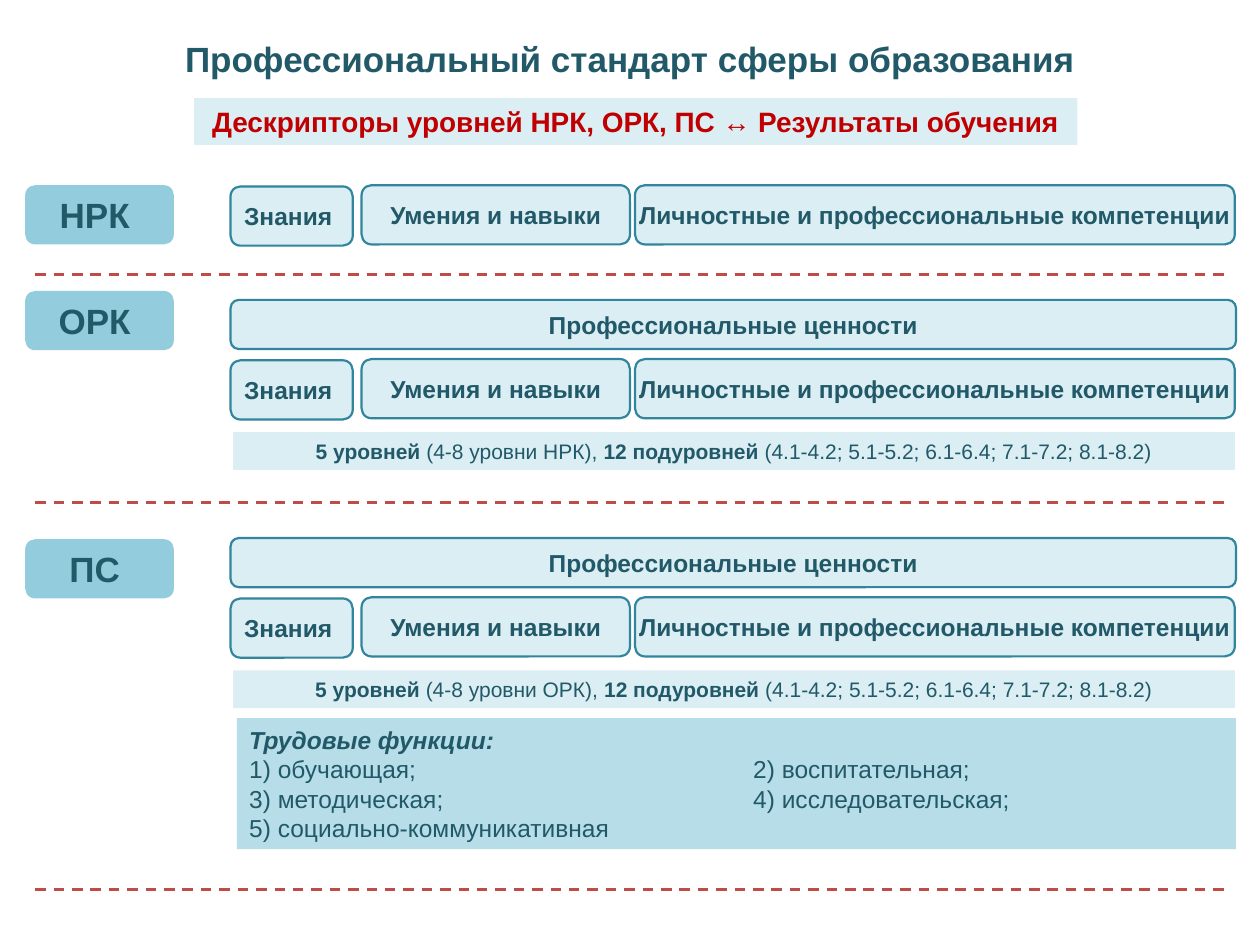
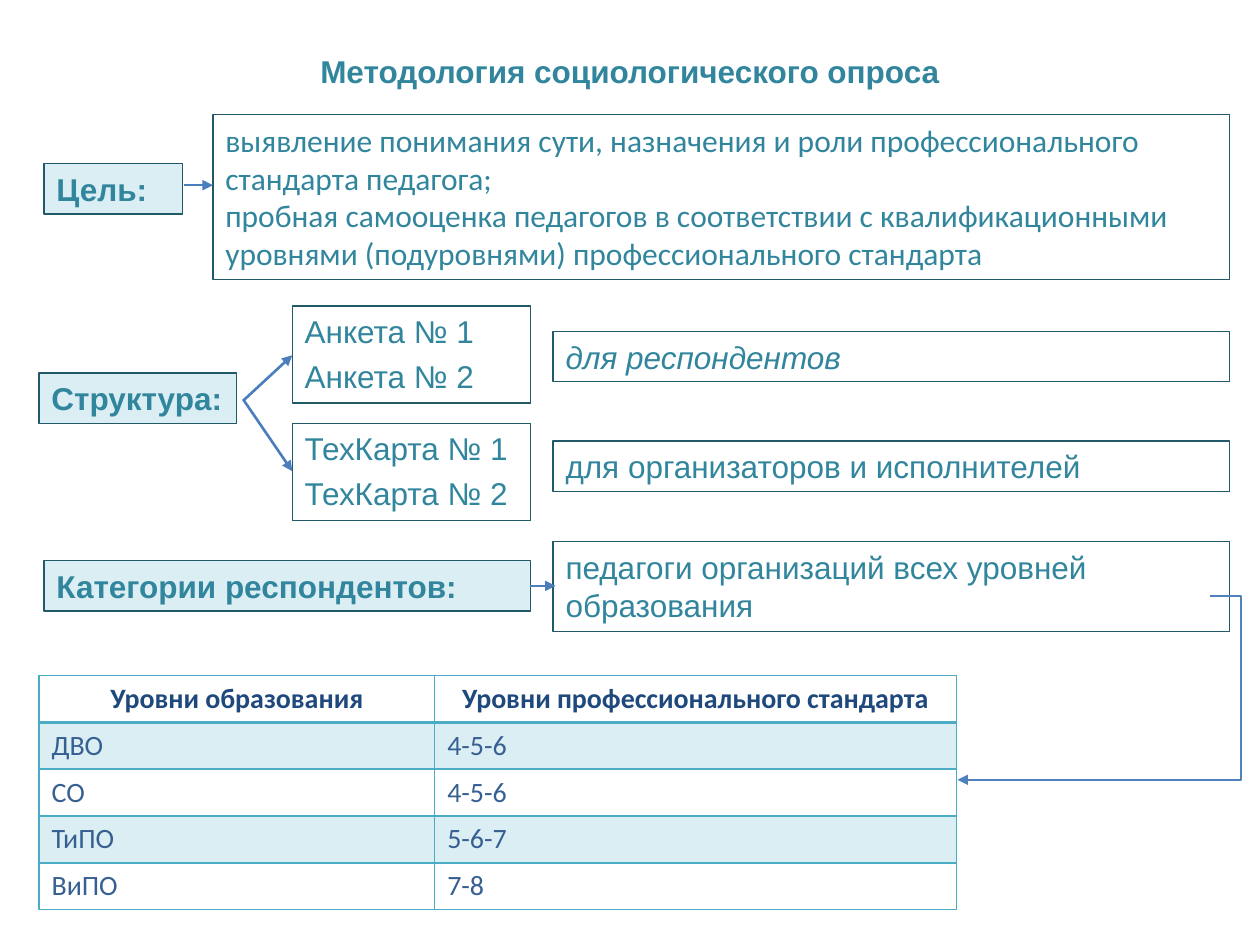
"""Build two slides on the professional standard in education and its survey."""

from dataclasses import dataclass, field
from typing import Any

from lxml import etree
from pptx import Presentation
from pptx.dml.color import RGBColor
from pptx.enum.dml import MSO_LINE
from pptx.enum.shapes import MSO_CONNECTOR, MSO_SHAPE
from pptx.enum.text import MSO_ANCHOR, PP_ALIGN
from pptx.oxml.ns import qn
from pptx.util import Inches, Pt

RECTANGLE, ROUNDED = MSO_SHAPE.RECTANGLE, MSO_SHAPE.ROUNDED_RECTANGLE
STRAIGHT, ELBOW = MSO_CONNECTOR.STRAIGHT, MSO_CONNECTOR.ELBOW
LEFT, CENTER = PP_ALIGN.LEFT, PP_ALIGN.CENTER
TOP, MIDDLE = MSO_ANCHOR.TOP, MSO_ANCHOR.MIDDLE
DASH = MSO_LINE.DASH

DARK_TEAL, TEAL = "215968", "31859C"
PALE, SOFT, MEDIUM = "DBEEF4", "B7DEE8", "93CDDD"
RED, DIVIDER_RED = "C00000", "BF4C48"
ARROW_BLUE, ELBOW_BLUE = "4B7EBC", "4F81BD"
GRID, HEADER_BLUE, CELL_BLUE = "4BACC6", "1F497D", "376092"


@dataclass(frozen=True)
class Format:
    """Font settings of a run."""

    size: float
    color: str
    name: str = "Arial"
    bold: bool = False
    italic: bool = False


@dataclass(frozen=True)
class Span:
    """Text with one format."""

    text: str
    format: Format


@dataclass(frozen=True)
class Box:
    """A box holding paragraphs made of spans; lengths are in inches."""

    left: float
    top: float
    width: float
    height: float
    paras: list[list[Span]] = field(default_factory=list)
    fill: str | None = None
    line: str | None = None
    line_width: float = 0.75
    shape: Any = RECTANGLE
    align: Any = LEFT
    anchor: Any = TOP
    wrap: bool = True
    gap: float = 0
    tab: float | None = None


@dataclass(frozen=True)
class Line:
    """A straight or elbow connector; lengths are in inches."""

    start: tuple[float, float]
    end: tuple[float, float]
    color: str = ARROW_BLUE
    arrow: bool = True
    dash: Any = None
    bend: int | None = None


@dataclass(frozen=True)
class Level:
    """One framework level with its tag and competence row."""

    name: str
    tag_top: float
    row_top: float
    parent: str | None = None


HEADING = Format(20, DARK_TEAL, bold=True)
STRONG = Format(14, DARK_TEAL, bold=True)
LEAD = Format(14, DARK_TEAL, bold=True, italic=True)
PLAIN = Format(14, DARK_TEAL)
COUNT_BOLD = Format(12, DARK_TEAL, bold=True)
COUNT = Format(12, DARK_TEAL)
SURVEY = Format(18, TEAL)
SURVEY_BOLD = Format(18, TEAL, bold=True)
SURVEY_ITALIC = Format(18, TEAL, italic=True)
SURVEY_GOAL = Format(18, TEAL, "Calibri")
TABLE_HEAD = Format(16, HEADER_BLUE, "Calibri", bold=True)
TABLE_CELL = Format(16, CELL_BLUE, "Calibri")

LEVELS = [
    Level("НРК", 1.47, 1.47),
    Level("ОРК", 2.31, 2.85, "НРК"),
    Level("ПС", 4.28, 4.74, "ОРК"),
]
COMPETENCES = [
    ("Знания ", 1.83, 0.97, 0.01),
    ("Умения и навыки", 2.87, 2.13, 0),
    ("Личностные и профессиональные компетенции", 5.04, 4.76, 0),
]
FUNCTIONS = [
    "1) обучающая;\t2) воспитательная;",
    "3) методическая;\t4) исследовательская;",
    "5) социально-коммуникативная",
]
EDUCATION_LEVELS = [
    ("Уровни образования", "Уровни профессионального стандарта"),
    ("ДВО", "4-5-6"),
    ("СО", "4-5-6"),
    ("ТиПО", "5-6-7"),
    ("ВиПО", "7-8"),
]


def rgb(value: str) -> RGBColor:
    """Turn a hex string into a colour."""
    return RGBColor.from_string(value)


def add_span(para: Any, span: Span) -> None:
    """Add a formatted run to a paragraph."""
    run = para.add_run()
    run.text = span.text
    style = span.format
    values = {
        "name": style.name,
        "size": Pt(style.size),
        "bold": style.bold,
        "italic": style.italic,
    }
    for name, value in values.items():
        setattr(run.font, name, value)
    run.font.color.rgb = rgb(style.color)


def add_box(page: Any, box: Box) -> None:
    """Draw a box with its text."""
    area = [Inches(value) for value in (box.left, box.top, box.width, box.height)]
    shape = page.shapes.add_shape(box.shape, *area)
    shape.shadow.inherit = False
    if box.fill:
        shape.fill.solid()
        shape.fill.fore_color.rgb = rgb(box.fill)
    else:
        shape.fill.background()
    if box.line:
        shape.line.color.rgb = rgb(box.line)
        shape.line.width = Pt(box.line_width)
    else:
        shape.line.fill.background()
    frame = shape.text_frame
    frame.word_wrap = box.wrap
    frame.vertical_anchor = box.anchor
    for index, spans in enumerate(box.paras):
        para = frame.add_paragraph() if index else frame.paragraphs[0]
        para.alignment = box.align
        if index and box.gap:
            para.space_before = Pt(box.gap)
        if box.tab:
            properties = para._p.get_or_add_pPr()
            tabs = etree.SubElement(properties, qn("a:tabLst"))
            etree.SubElement(tabs, qn("a:tab"), pos=str(Inches(box.tab)), algn="l")
        for span in spans:
            add_span(para, span)


def add_line(page: Any, line: Line) -> None:
    """Draw a connector with its dash, bend and arrowhead."""
    kind = STRAIGHT if line.bend is None else ELBOW
    points = [Inches(value) for value in (*line.start, *line.end)]
    connector = page.shapes.add_connector(kind, *points)
    connector.line.color.rgb = rgb(line.color)
    connector.line.width = Pt(1.5)
    if line.dash:
        connector.line.dash_style = line.dash
    properties = connector._element.spPr
    if line.arrow:
        etree.SubElement(properties.find(qn("a:ln")), qn("a:tailEnd"), type="triangle")
    if line.bend is not None:
        guides = properties.find(qn("a:prstGeom")).find(qn("a:avLst"))
        etree.SubElement(guides, qn("a:gd"), name="adj1", fmla=f"val {line.bend}")
    etree.SubElement(properties, qn("a:effectLst"))


def add_title(page: Any, text: str, style: Format, top: float, height: float) -> None:
    """Draw a centred slide title."""
    add_box(page, Box(0.4, top, 9.2, height, [[Span(text, style)]], align=CENTER, anchor=MIDDLE))


def set_borders(cell: Any, bottom: float) -> None:
    """Draw the four borders of a table cell."""
    properties = cell._tc.get_or_add_tcPr()
    for side, width in {"L": 1, "R": 1, "T": 1, "B": bottom}.items():
        border = etree.SubElement(properties, qn(f"a:ln{side}"), w=str(Pt(width)))
        fill = etree.SubElement(border, qn("a:solidFill"))
        etree.SubElement(fill, qn("a:srgbClr"), val=GRID)


def add_levels_table(page: Any) -> None:
    """Draw the table of education levels."""
    area = [Inches(value) for value in (0.31, 5.36, 7.28, 1.83)]
    table = page.shapes.add_table(len(EDUCATION_LEVELS), 2, *area).table
    table.first_row = table.horz_banding = False
    for column, width in zip(table.columns, (3.14, 4.14)):
        column.width = Inches(width)
    for row, texts in enumerate(EDUCATION_LEVELS):
        for column, text in enumerate(texts):
            cell = table.cell(row, column)
            set_borders(cell, 1 if row else 2)
            if row % 2:
                cell.fill.solid()
                cell.fill.fore_color.rgb = rgb(PALE)
            else:
                cell.fill.background()
            para = cell.text_frame.paragraphs[0]
            para.alignment = LEFT if row else CENTER
            add_span(para, Span(text, TABLE_CELL if row else TABLE_HEAD))


def centered_box(text: str, style: Format, *area: float, **look: Any) -> Box:
    """Make a rounded box with one centred line."""
    return Box(*area, [[Span(text, style)]], shape=ROUNDED, align=CENTER,
               anchor=MIDDLE, wrap=False, **look)


def add_level(page: Any, level: Level) -> None:
    """Draw a framework level: tag, competences, values and sublevels."""
    outlined = {"fill": PALE, "line": TEAL, "line_width": 1.25}
    add_box(page, centered_box(f"{level.name} ", HEADING, 0.2, level.tag_top, 1.18, 0.47, fill=MEDIUM))
    for text, left, width, shift in COMPETENCES:
        add_box(page, centered_box(text, STRONG, left, level.row_top + shift, width, 0.47, **outlined))
    if level.parent:
        values_top = level.row_top - 0.47
        add_box(page, centered_box("Профессиональные ценности", STRONG, 1.83, values_top, 7.98, 0.39, **outlined))
        count = [
            Span("5 уровней ", COUNT_BOLD),
            Span(f"(4-8 уровни {level.parent}), ", COUNT),
            Span("12 подуровней ", COUNT_BOLD),
            Span("(4.1-4.2; 5.1-5.2; 6.1-6.4; 7.1-7.2; 8.1-8.2)", COUNT),
        ]
        add_box(page, Box(1.85, level.row_top + 0.58, 7.95, 0.3, [count], PALE, align=CENTER))


def build_standard(page: Any) -> None:
    """Build the slide on the professional standard."""
    add_title(page, "Профессиональный стандарт сферы образования", HEADING, 0.25, 0.43)
    subtitle = Span("Дескрипторы уровней НРК, ОРК, ПС ↔ Результаты обучения", Format(16, RED, bold=True))
    add_box(page, Box(1.54, 0.78, 7.01, 0.37, [[subtitle]], PALE, align=CENTER))
    for level in LEVELS:
        add_level(page, level)
    paras = [[Span("Трудовые функции:", LEAD)], *([Span(text, PLAIN)] for text in FUNCTIONS)]
    add_box(page, Box(1.88, 5.7, 7.93, 1.04, paras, SOFT, anchor=MIDDLE, tab=4))
    for top in (2.18, 3.99, 7.06):
        add_line(page, Line((0.28, top), (9.72, top), DIVIDER_RED, arrow=False, dash=DASH))


def build_survey(page: Any) -> None:
    """Build the slide on the survey method."""
    add_title(page, "Методология социологического опроса", SURVEY_BOLD, 0.36, 0.4)
    boxes = [
        ((0.35, 1.3, 1.1, 0.4), ["Цель:"], SURVEY_BOLD, PALE),
        ((1.69, 0.91, 8.07, 1.31), [
            "выявление понимания сути, назначения и роли профессионального стандарта педагога;",
            "пробная самооценка педагогов в соответствии с квалификационными уровнями "
            "(подуровнями) профессионального стандарта",
        ], SURVEY_GOAL, None),
        ((0.31, 2.96, 1.57, 0.4), ["Структура:"], SURVEY_BOLD, PALE),
        ((4.39, 2.63, 5.37, 0.4), ["для респондентов"], SURVEY_ITALIC, None),
        ((4.39, 3.5, 5.37, 0.4), ["для организаторов и исполнителей"], SURVEY, None),
        ((2.32, 2.43, 1.89, 0.77), ["Анкета № 1", "Анкета № 2"], SURVEY, None),
        ((2.32, 3.36, 1.89, 0.77), ["ТехКарта № 1", "ТехКарта № 2"], SURVEY, None),
        ((0.35, 4.45, 3.86, 0.4), ["Категории респондентов:"], SURVEY_BOLD, PALE),
        ((4.39, 4.3, 5.37, 0.71), ["педагоги организаций всех уровней образования"], SURVEY, None),
    ]
    for area, texts, style, fill in boxes:
        paras = [[Span(text, style)] for text in texts]
        gap = 0 if style is SURVEY_GOAL else 4
        add_box(page, Box(*area, paras, fill, DARK_TEAL, gap=gap))
    add_levels_table(page)
    for line in (
        Line((1.46, 1.47), (1.69, 1.47)),
        Line((1.93, 3.18), (2.32, 2.82)),
        Line((1.93, 3.17), (2.32, 3.74)),
        Line((4.21, 4.65), (4.41, 4.65)),
        Line((9.6, 4.73), (7.6, 6.19), ELBOW_BLUE, bend=-12500),
    ):
        add_line(page, line)


def main() -> None:
    """Build and save the deck."""
    deck = Presentation()
    deck.slide_width, deck.slide_height = Inches(10), Inches(7.5)
    for build in (build_standard, build_survey):
        build(deck.slides.add_slide(deck.slide_layouts[6]))
    deck.save("out.pptx")


if __name__ == "__main__":
    main()
